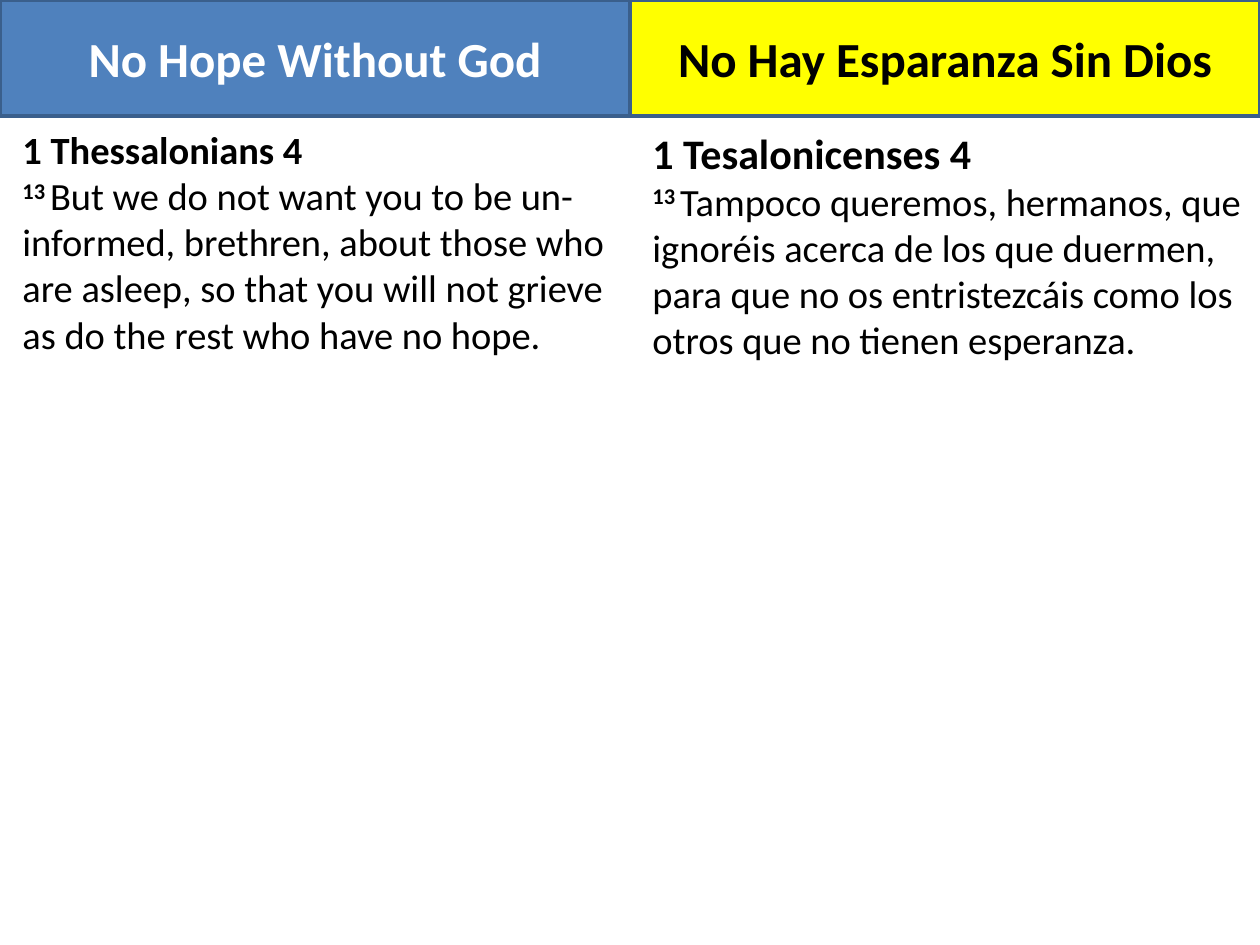
from dataclasses import dataclass

from pptx import Presentation
from pptx import util as u
from pptx.dml.color import RGBColor
from pptx.enum import shapes, text

COLORS = {"blue": "4F81BD", "yellow": "FFFF00", "border": "3A5F8C", "white": "FFFFFF", "black": "000000"}
FONT = "Calibri"
COLUMN_WIDTH = 5
HEADER_HEIGHT = 0.92
INSET = 0.08
VERSE_SIZE = 22


@dataclass(frozen=True)
class Column:
    """One language column: a coloured title above a Bible passage."""

    title: str
    fill: str
    title_color: str
    reference: str
    reference_size: int
    verse: str
    top: float
    height: float


COLUMNS = (
    Column("No Hope Without God", "blue", "white", "1 Thessalonians 4", 22,
           "But we do not want you to be un-informed, brethren, about those who are asleep, "
           "so that you will not grieve as do the rest who have no hope.", 0.95, 1.95),
    Column("No Hay Esparanza Sin Dios", "yellow", "black", "1 Tesalonicenses 4", 24,
           "Tampoco queremos, hermanos, que ignoréis acerca de los que duermen, "
           "para que no os entristezcáis como los otros que no tienen esperanza.", 0.96, 1.99),
)


def color(name: str) -> RGBColor:
    """Look up a named colour."""
    return RGBColor.from_string(COLORS[name])


def add_span(para, words: str, size: int, bold: bool = True, ink: str = "black", raised: bool = False) -> None:
    """Add one formatted run to a paragraph."""
    span = para.add_run()
    span.text = words
    span.font.name = FONT
    span.font.size = u.Pt(size)
    span.font.bold = bold
    span.font.color.rgb = color(ink)
    if raised:
        span._r.get_or_add_rPr().set("baseline", "30000")


def add_passage(page, column: Column, left: float) -> None:
    """Add the reference and its numbered verse."""
    box = page.shapes.add_textbox(u.Inches(left + INSET), u.Inches(column.top),
                                  u.Inches(COLUMN_WIDTH - INSET), u.Inches(column.height))
    frame = box.text_frame
    frame.word_wrap = True
    frame.auto_size = text.MSO_AUTO_SIZE.SHAPE_TO_FIT_TEXT
    add_span(frame.paragraphs[0], column.reference, column.reference_size)
    para = frame.add_paragraph()
    add_span(para, "13 ", VERSE_SIZE, raised=True)
    add_span(para, column.verse, VERSE_SIZE, bold=False)


def add_header(page, column: Column, left: float) -> None:
    """Add the coloured title bar of a column."""
    box = page.shapes.add_shape(shapes.MSO_SHAPE.RECTANGLE, u.Inches(left), u.Inches(0),
                                u.Inches(COLUMN_WIDTH), u.Inches(HEADER_HEIGHT))
    box.shadow.inherit = False
    box.fill.solid()
    box.fill.fore_color.rgb = color(column.fill)
    box.line.color.rgb = color("border")
    box.line.width = u.Pt(2)
    frame = box.text_frame
    frame.word_wrap = True
    frame.vertical_anchor = text.MSO_ANCHOR.MIDDLE
    para = frame.paragraphs[0]
    para.alignment = text.PP_ALIGN.CENTER
    add_span(para, column.title, 28, ink=column.title_color)


def main() -> None:
    """Build the bilingual slide and save it."""
    deck = Presentation()
    deck.slide_width, deck.slide_height = u.Inches(10), u.Inches(7.5)
    page = deck.slides.add_slide(deck.slide_layouts[6])
    for draw in (add_passage, add_header):
        for index, column in enumerate(COLUMNS):
            draw(page, column, index * COLUMN_WIDTH)
    deck.save("out.pptx")


if __name__ == "__main__":
    main()
